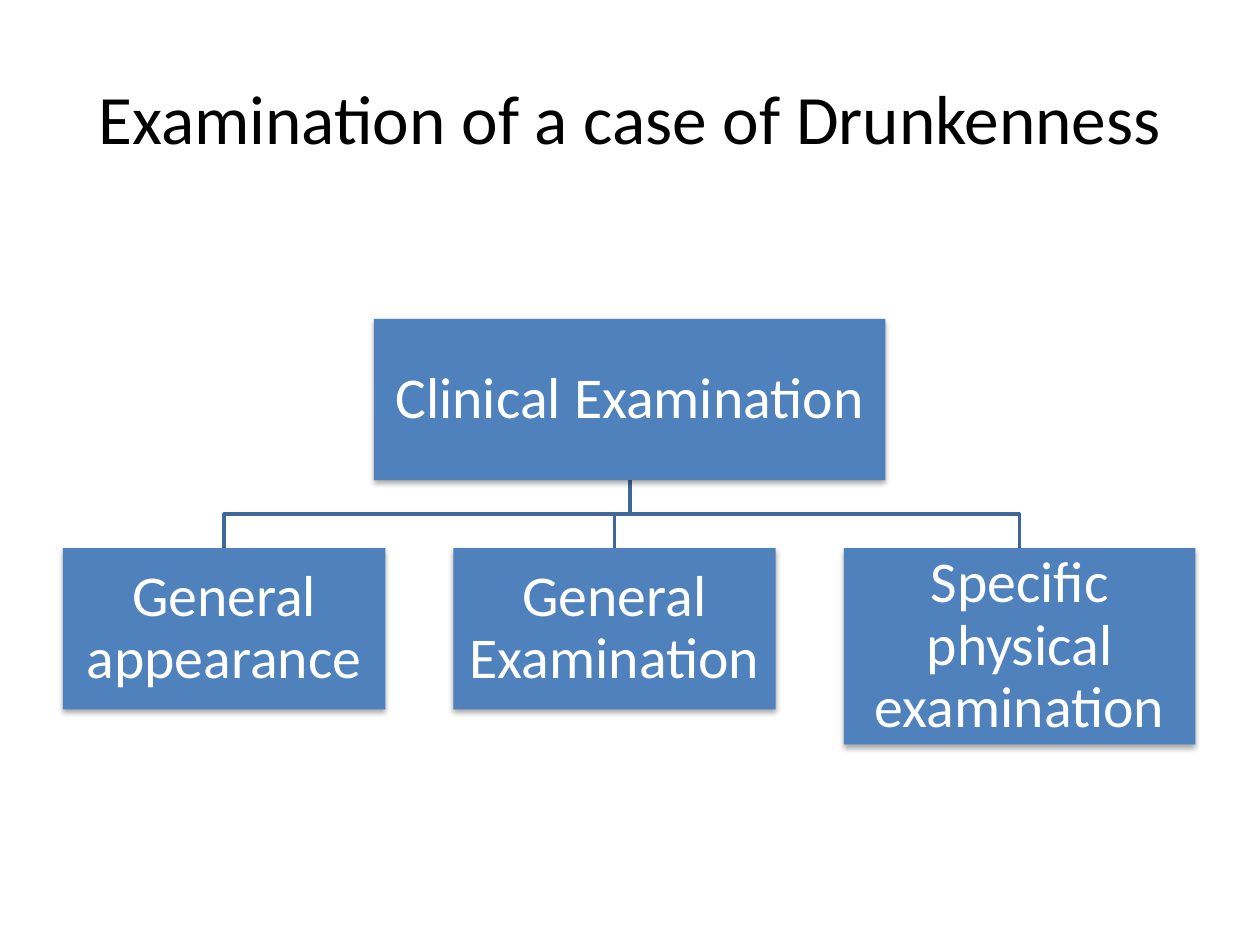
from lxml import etree
from pptx import Presentation
from pptx.dml.color import RGBColor
from pptx.enum.shapes import MSO_SHAPE
from pptx.enum.text import MSO_ANCHOR, PP_ALIGN
from pptx.util import Cm, Pt

RECT = MSO_SHAPE.RECTANGLE
MIDDLE = MSO_ANCHOR.MIDDLE
CENTER = PP_ALIGN.CENTER
A = "http://schemas.openxmlformats.org/drawingml/2006/main"

SHADOW = f"""<a:outerShdw xmlns:a="{A}" blurRad="40000" dist="23000" dir="5400000"
    rotWithShape="0"><a:srgbClr val="000000"><a:alpha val="35000"/></a:srgbClr></a:outerShdw>"""
SCENE = f"""<a:scene3d xmlns:a="{A}"><a:camera prst="orthographicFront"/>
    <a:lightRig rig="threePt" dir="t"><a:rot lat="0" lon="0" rev="1200000"/></a:lightRig>
    </a:scene3d>"""
BEVEL = f'<a:sp3d xmlns:a="{A}"><a:bevelT w="63500" h="25400"/></a:sp3d>'


def color(value):
    return RGBColor.from_string(value)


def write(sp, text, size, value, margin):
    tf = sp.text_frame
    tf.text = text
    tf.word_wrap = True
    tf.vertical_anchor = MIDDLE
    tf.margin_left = tf.margin_right = tf.margin_top = tf.margin_bottom = margin
    p = tf.paragraphs[0]
    p.alignment = CENTER
    r = p.runs[0]
    r.font.name = "Calibri"
    r.font.size = Pt(size)
    r.font.color.rgb = color(value)
    return p


prs = Presentation()
prs.slide_width, prs.slide_height = Cm(25.4), Cm(19.05)
s = prs.slides.add_slide(prs.slide_layouts[6])

title = s.shapes.add_textbox(Cm(1.27), Cm(0.76), Cm(22.86), Cm(3.18))
write(title, "Examination of a case of Drunkenness", 39.6, "000000", Cm(0.13))

# Box geometry in centimetres: left, top, width, height
root = ("Clinical Examination", 7.54, 6.43, 10.31, 3.25)
child_top, child_step = 11.05, 7.87
children = [
    (text, 1.27 + i * child_step, child_top, width, height)
    for i, (text, width, height) in enumerate([
        ("General appearance", 6.5, 3.25),
        ("General Examination", 6.5, 3.25),
        ("Specific physical examination", 7.09, 3.96),
    ])
]

# Branches from the root down to each child
root_x, root_bottom = 12.7, 9.68
branch_y = (root_bottom + child_top) / 2
for text, left, top, width, height in reversed(children):
    x = left + width / 2
    fb = s.shapes.build_freeform(Cm(root_x), Cm(root_bottom))
    fb.add_line_segments(
        [(Cm(root_x), Cm(branch_y)), (Cm(x), Cm(branch_y)), (Cm(x), Cm(top))],
        close=False)
    branch = fb.convert_to_shape()
    branch.shadow.inherit = False
    branch.fill.background()
    branch.line.color.rgb = color("3F6797")
    branch.line.width = Pt(2)

for text, left, top, width, height in [root] + children:
    sp = s.shapes.add_shape(RECT, Cm(left), Cm(top), Cm(width), Cm(height))
    sp.fill.solid()
    sp.fill.fore_color.rgb = color("4F81BD")
    sp.line.fill.background()
    sp.shadow.inherit = False
    props = sp._element.spPr
    props.find(f"{{{A}}}effectLst").append(etree.fromstring(SHADOW))
    props.append(etree.fromstring(SCENE))
    props.append(etree.fromstring(BEVEL))
    p = write(sp, text, 33, "FFFFFF", Cm(0.05))
    p.line_spacing = 0.9

prs.save("out.pptx")
